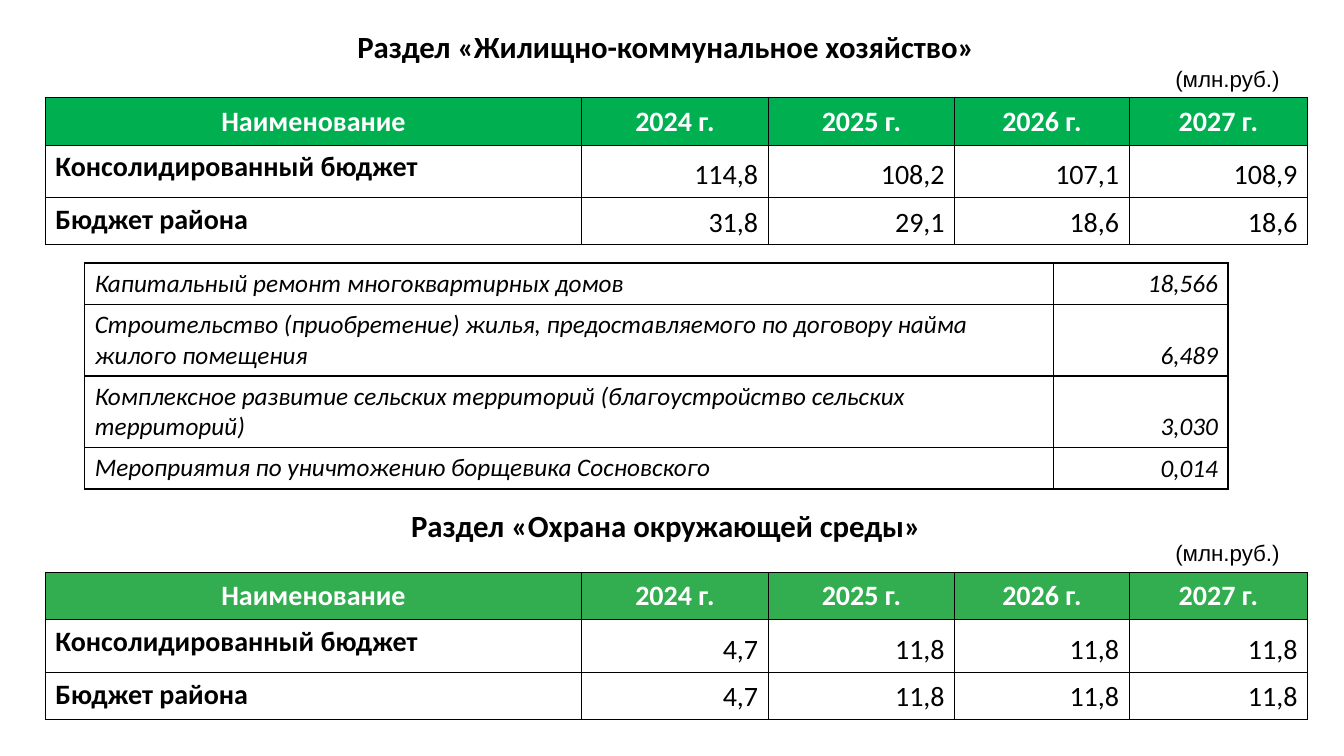
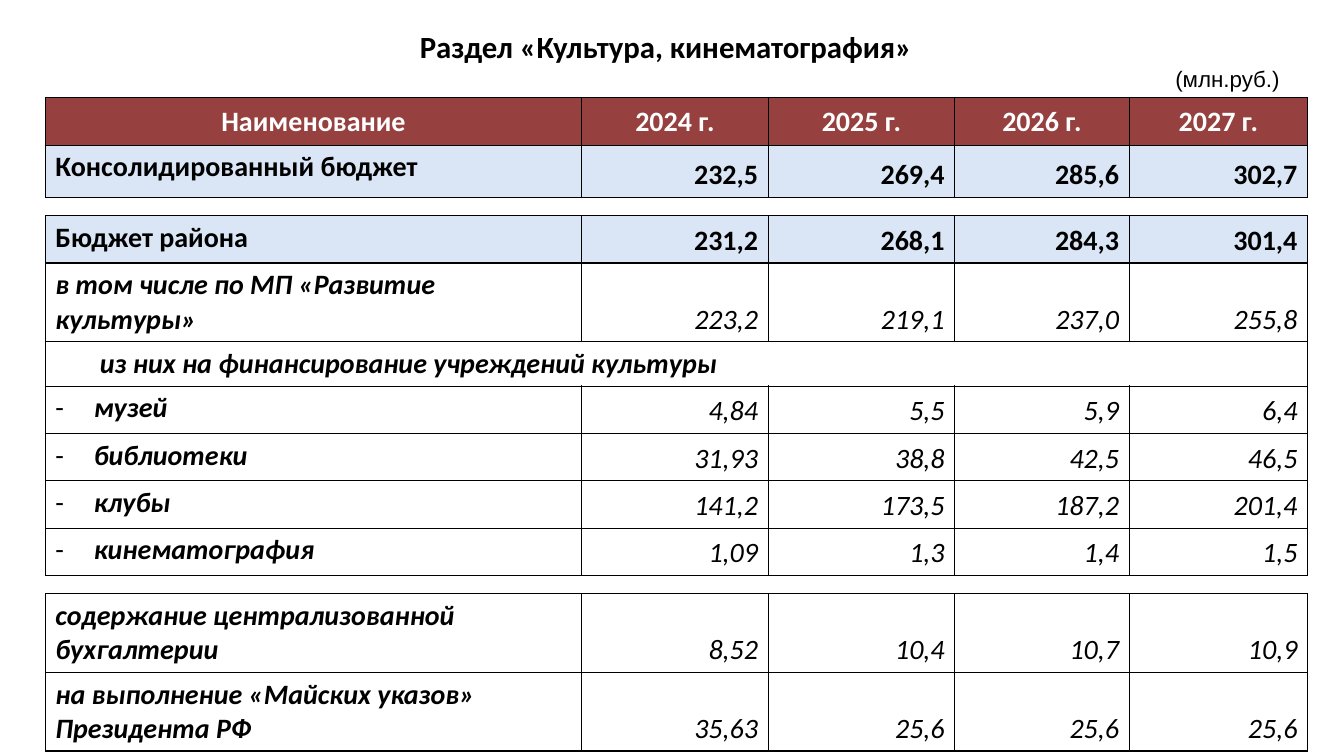
from dataclasses import dataclass

from lxml import etree
from pptx import Presentation
from pptx.dml.color import RGBColor
from pptx.enum.text import MSO_ANCHOR, MSO_AUTO_SIZE, PP_ALIGN
from pptx.oxml.ns import qn
from pptx.util import Emu, Pt

LEFT, CENTER, RIGHT = PP_ALIGN.LEFT, PP_ALIGN.CENTER, PP_ALIGN.RIGHT
TOP, MIDDLE, BOTTOM = MSO_ANCHOR.TOP, MSO_ANCHOR.MIDDLE, MSO_ANCHOR.BOTTOM
NO_FIT = MSO_AUTO_SIZE.NONE

PX = 9144  # 100 px to the inch
BLACK, WHITE = "000000", "FFFFFF"
GREEN, SOFT_GREEN, DARK_RED, PALE_BLUE = "00B050", "32AE51", "740000", "DAE6F6"
FONT, UNIT_FONT = "Calibri", "Arial"

TABLE_LEFT = 45
BUDGET_COLS = [532, 185, 185, 173, 177]
DETAIL_COLS = [961, 173]
YEARS = ["Наименование", "2024 г.", "2025 г.", "2026 г.", "2027 г."]
CONSOLIDATED, DISTRICT = "Консолидированный бюджет", "Бюджет района"
HEAD_H, TALL_H, ROW_H, GAP_H, TWO_LINE_H = 47, 52, 47, 18, 77


@dataclass(frozen=True)
class RowStyle:
    label_bold: bool = True
    number_bold: bool = False
    italic: bool = False
    size: int = 20
    color: str = BLACK
    fill: str = ""
    alpha: int = 100
    header: bool = False
    spacer: bool = False
    bullet: bool = False
    indent: int = 0


PLAIN = RowStyle()
TOTAL = RowStyle(number_bold=True, fill=PALE_BLUE)
ITALIC = RowStyle(italic=True)
SUBHEAD = RowStyle(italic=True, indent=44)
ITEM = RowStyle(italic=True, bullet=True, indent=38)
DETAIL = RowStyle(label_bold=False, italic=True, size=18)
SPACER = RowStyle(size=4, spacer=True)


def header_style(fill, alpha=100):
    return RowStyle(number_bold=True, color=WHITE, fill=fill, alpha=alpha, header=True)


def px(n):
    return Emu(n * PX)


def rgb(color):
    return RGBColor.from_string(color)


def set_font(p, size, color=BLACK, bold=False, italic=False, name=FONT):
    f = p.font
    f.name, f.size, f.bold, f.italic = name, Pt(size), bold, italic
    f.color.rgb = rgb(color)


def format_line(sp, box, text, size, **font):
    """Place a shape and give it one centred line of text."""
    sp.left, sp.top, sp.width, sp.height = map(px, box)
    tf = sp.text_frame
    tf.word_wrap, tf.auto_size, tf.vertical_anchor = True, NO_FIT, MIDDLE
    tf.margin_top = tf.margin_bottom = 0
    p = tf.paragraphs[0]
    p.text, p.alignment = text, CENTER
    set_font(p, size, **font)


def add_text_box(slide):
    return slide.shapes.add_textbox(0, 0, 0, 0)


def set_borders(cell, spacer):
    """Draw thin black borders; a spacer keeps only its top and bottom."""
    tc_pr = cell._tc.get_or_add_tcPr()
    for side in ("lnL", "lnR", "lnT", "lnB"):
        ln = etree.SubElement(tc_pr, qn("a:" + side), w=str(Pt(1)))
        if spacer and side in ("lnL", "lnR"):
            etree.SubElement(ln, qn("a:noFill"))
        else:
            fill = etree.SubElement(ln, qn("a:solidFill"))
            etree.SubElement(fill, qn("a:srgbClr"), val=BLACK)


def set_fill(cell, color, alpha):
    if not color:
        cell.fill.background()
        return
    cell.fill.solid()
    cell.fill.fore_color.rgb = rgb(color)
    if alpha < 100:
        clr = cell._tc.tcPr.find(".//" + qn("a:solidFill") + "/" + qn("a:srgbClr"))
        for clr in cell._tc.tcPr.findall(qn("a:solidFill") + "/" + qn("a:srgbClr")):
            etree.SubElement(clr, qn("a:alpha"), val=str(alpha * 1000))


def set_indent(p, indent, bullet):
    p_pr = p._p.get_or_add_pPr()
    p_pr.set("marL", str(px(indent)))
    if bullet:
        p_pr.set("indent", str(-px(indent)))
        # Bullet elements come before the default run properties.
        p_pr.insert(0, p_pr.makeelement(qn("a:buFont"), {"typeface": FONT}))
        p_pr.insert(1, p_pr.makeelement(qn("a:buChar"), {"char": "-"}))


def format_cell(cell, text, style, is_label):
    set_borders(cell, style.spacer)
    set_fill(cell, style.fill, style.alpha)
    p = cell.text_frame.paragraphs[0]
    if style.spacer:
        cell.margin_top = cell.margin_bottom = 0
        etree.SubElement(p._p, qn("a:endParaRPr"), sz=str(style.size * 100))
        return
    p.text = text
    bold = style.label_bold if is_label else style.number_bold
    set_font(p, style.size, style.color, bold, style.italic)
    if style.header:
        p.alignment, cell.vertical_anchor = CENTER, MIDDLE
    elif is_label:
        p.alignment, cell.vertical_anchor = LEFT, TOP
        if style.indent:
            set_indent(p, style.indent, style.bullet)
    else:
        p.alignment, cell.vertical_anchor = RIGHT, BOTTOM


def add_table(slide, left, top, cols, rows):
    """Add a table from rows of (height, style, texts); a lone text spans its row."""
    height = sum(h for h, _, _ in rows)
    box = map(px, (left, top, sum(cols), height))
    table = slide.shapes.add_table(len(rows), len(cols), *box).table
    table.first_row = table.horz_banding = False
    for column, width in zip(table.columns, cols):
        column.width = px(width)
    for i, (h, style, texts) in enumerate(rows):
        table.rows[i].height = px(h)
        padded = texts + [""] * (len(cols) - len(texts))
        for j, text in enumerate(padded):
            format_cell(table.cell(i, j), text, style, j == 0)
        if len(texts) == 1:
            table.cell(i, 0).merge(table.cell(i, len(cols) - 1))


def add_section(slide, title_shape, title, title_top, table_top, rows):
    """Add a heading, the unit of measure and the budget table."""
    format_line(title_shape, (131, title_top, 1059, 37), title, 22, bold=True)
    unit_box = (1126, table_top - 38, 183, 37)
    format_line(add_text_box(slide), unit_box, "(млн.руб.)", 16, name=UNIT_FONT)
    add_table(slide, TABLE_LEFT, table_top, BUDGET_COLS, rows)


def budget_rows(header, consolidated, district, style=PLAIN):
    return [
        (HEAD_H, header, YEARS),
        (TALL_H, style, [CONSOLIDATED] + consolidated),
        (ROW_H, style, [DISTRICT] + district),
    ]


def add_housing_and_environment(slide):
    housing = budget_rows(
        header_style(GREEN),
        ["114,8", "108,2", "107,1", "108,9"],
        ["31,8", "29,1", "18,6", "18,6"],
    )
    add_section(slide, slide.shapes.title,
                "Раздел «Жилищно-коммунальное хозяйство»", 27, 97, housing)
    add_table(slide, 84, 261, DETAIL_COLS, [
        (41, DETAIL, ["Капитальный ремонт многоквартирных домов", "18,566"]),
        (70, DETAIL, ["Строительство (приобретение) жилья, предоставляемого "
                      "по договору найма жилого помещения", "6,489"]),
        (70, DETAIL, ["Комплексное развитие сельских территорий "
                      "(благоустройство сельских территорий)", "3,030"]),
        (41, DETAIL, ["Мероприятия по уничтожению борщевика Сосновского", "0,014"]),
    ])
    values = ["4,7", "11,8", "11,8", "11,8"]
    add_section(slide, add_text_box(slide), "Раздел «Охрана окружающей среды»",
                503, 568, budget_rows(header_style(SOFT_GREEN), values, values))


def add_culture(slide):
    head, consolidated, district = budget_rows(
        header_style(DARK_RED, 75),
        ["232,5", "269,4", "285,6", "302,7"],
        ["231,2", "268,1", "284,3", "301,4"],
        TOTAL,
    )
    gap = (GAP_H, SPACER, [""] * len(BUDGET_COLS))
    institutions = [
        ["музей", "4,84", "5,5", "5,9", "6,4"],
        ["библиотеки", "31,93", "38,8", "42,5", "46,5"],
        ["клубы", "141,2", "173,5", "187,2", "201,4"],
        ["кинематография", "1,09", "1,3", "1,4", "1,5"],
    ]
    rows = [
        head, consolidated, gap, district,
        (TWO_LINE_H, ITALIC, ["в том числе по МП «Развитие культуры»",
                              "223,2", "219,1", "237,0", "255,8"]),
        (43, SUBHEAD, ["из них на финансирование учреждений культуры"]),
        *[(ROW_H, ITEM, texts) for texts in institutions],
        gap,
        (TWO_LINE_H, ITALIC, ["содержание централизованной бухгалтерии",
                              "8,52", "10,4", "10,7", "10,9"]),
        (TWO_LINE_H, ITALIC, ["на выполнение «Майских указов» Президента РФ",
                              "35,63", "25,6", "25,6", "25,6"]),
    ]
    add_section(slide, slide.shapes.title, "Раздел «Культура, кинематография»",
                27, 97, rows)


def main():
    prs = Presentation()
    prs.slide_width, prs.slide_height = px(1333), px(750)
    title_only = prs.slide_layouts[5]
    for build in (add_housing_and_environment, add_culture):
        build(prs.slides.add_slide(title_only))
    prs.save("out.pptx")


if __name__ == "__main__":
    main()
